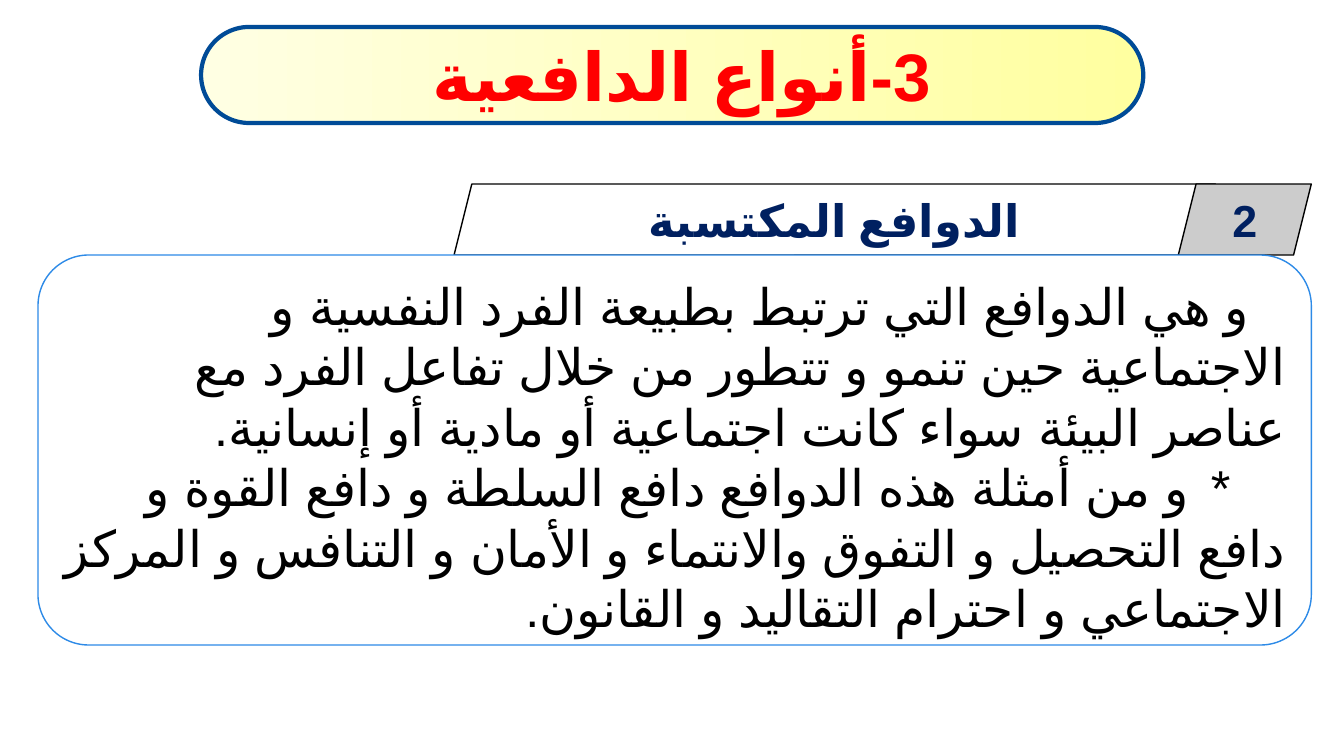
from lxml.etree import SubElement
from pptx import Presentation
from pptx.dml.color import RGBColor
from pptx.enum.shapes import MSO_SHAPE
from pptx.enum.text import MSO_ANCHOR, MSO_AUTO_SIZE, PP_ALIGN
from pptx.oxml.ns import qn
from pptx.util import Emu, Inches, Pt

# Content
FONT = "Arial"
LANGUAGE = "ar-SA"
TITLE = "3-أنواع الدافعية "
HEADING = "الدوافع المكتسبة"
NUMBER = "2"
# Each paragraph: first-line indent in px, then runs of (text, letter spacing in points)
BODY = [
    (36, [("و هي الدوافع التي ترتبط بطبيعة الفرد النفسية و الاجتماعية حين تنمو "
           "و تتطور من خلال تفاعل الفرد مع عناصر البيئة سواء كانت اجتماعية أو "
           "مادية أو إنسانية.", 0)]),
    (49, [("* ", 5),
          ("و من أمثلة هذه الدوافع دافع السلطة و دافع القوة و دافع التحصيل "
           "و التفوق والانتماء و الأمان و التنافس و المركز الاجتماعي و احترام "
           "التقاليد و القانون.", 0)]),
]

# Layout in px
SCALE = Inches(1) / 100.8
RIGHT = 1311
TITLE_AREA = (201, 27, 942, 96)
TAB_TOP, TAB_HEIGHT = 184, 71
HEADING_LEFT, HEADING_WIDTH = 454, 761
NUMBER_WIDTH = 133
BODY_LEFT, BODY_TOP, BODY_HEIGHT = 38, 255, 390


def px(length):
    return Emu(round(length * SCALE))


def colour(value):
    return RGBColor.from_string(value)


def panel(kind, area, fills, line, line_width=1):
    shape = page.shapes.add_shape(kind, *map(px, area))
    shape.shadow.inherit = False
    if len(fills) == 1:
        shape.fill.solid()
        shape.fill.fore_color.rgb = colour(fills[0])
    else:
        shape.fill.gradient()
        shape.fill.gradient_angle = 180
        for stop, shade in zip(shape.fill.gradient_stops, fills):
            stop.color.rgb = colour(shade)
    shape.line.color.rgb = colour(line)
    shape.line.width = Pt(line_width)
    return shape


def write(shape, paragraphs, size, value, bold=False,
          align=PP_ALIGN.CENTER, anchor=MSO_ANCHOR.MIDDLE):
    frame = shape.text_frame
    frame.word_wrap = True
    frame.auto_size = MSO_AUTO_SIZE.NONE
    frame.vertical_anchor = anchor
    for index, (indent, spans) in enumerate(paragraphs):
        para = frame.add_paragraph() if index else frame.paragraphs[0]
        para.alignment = align
        properties = para._p.get_or_add_pPr()
        properties.set("rtl", "1")
        properties.set("marL", "0")
        properties.set("indent", str(px(indent)))
        for text, spacing in spans:
            span = para.add_run()
            span.text = text
            span.font.size = Pt(size)
            span.font.bold = bold
            span.font.color.rgb = colour(value)
            span.font.name = FONT
            run_properties = span._r.get_or_add_rPr()
            run_properties.set("lang", LANGUAGE)
            SubElement(run_properties, qn("a:cs"), typeface=FONT)
            if spacing:
                run_properties.set("spc", str(spacing * 100))


deck = Presentation()
deck.slide_width, deck.slide_height = Inches(13.33), Inches(7.5)
page = deck.slides.add_slide(deck.slide_layouts[5])

# Title over its capsule
capsule = panel(MSO_SHAPE.ROUNDED_RECTANGLE, TITLE_AREA, ("FFFFA0", "FFFFE3"), "004B97", 3)
capsule.adjustments[0] = 0.5
title = page.shapes.title
title.left, title.top, title.width, title.height = map(px, TITLE_AREA)
capsule._element.addnext(title._element)
write(title, [(0, [(TITLE, 0)])], 48, "FF0000", bold=True)

# Heading and number tabs
tabs = [
    (HEADING, HEADING_LEFT, HEADING_WIDTH, "FFFFFF"),
    (NUMBER, RIGHT - NUMBER_WIDTH, NUMBER_WIDTH, "CCCCCC"),
]
for label, left, width, fill in tabs:
    tab = panel(MSO_SHAPE.PARALLELOGRAM, (left, TAB_TOP, width, TAB_HEIGHT), [fill], "000000")
    write(tab, [(0, [(label, 0)])], 32, "002060", bold=True)

# Body panel
body = panel(MSO_SHAPE.ROUNDED_RECTANGLE,
             (BODY_LEFT, BODY_TOP, RIGHT - BODY_LEFT, BODY_HEIGHT), ["FFFFFF"], "2D8AE7")
body.adjustments[0] = 0.13
write(body, BODY, 36, "000000", align=PP_ALIGN.RIGHT, anchor=MSO_ANCHOR.TOP)

deck.save("out.pptx")
